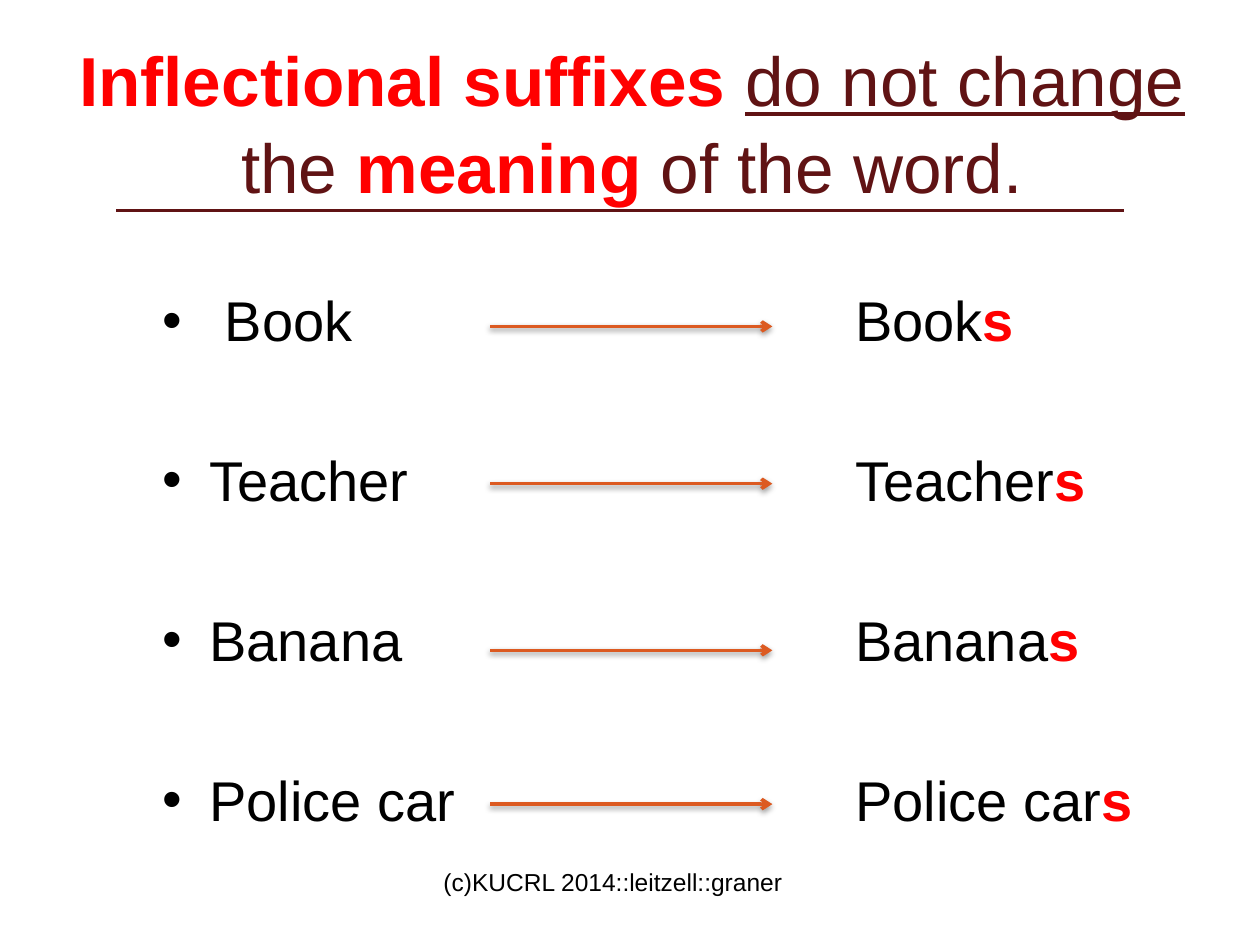
import dataclasses

import lxml.etree
import pptx
import pptx.dml.color
import pptx.enum.shapes
import pptx.enum.text
import pptx.oxml
import pptx.oxml.ns
import pptx.util
from pptx.util import Cm, Pt

Color = pptx.dml.color.RGBColor


@dataclasses.dataclass(frozen=True)
class Theme:
    """Hold the colours, font and type sizes of the slide."""
    font: str = "Arial"
    maroon: Color = Color(0x60, 0x13, 0x14)
    red: Color = Color(0xFF, 0x00, 0x00)
    black: Color = Color(0x00, 0x00, 0x00)
    orange: Color = Color(0xDC, 0x5A, 0x21)
    title_size: float = 39.6
    word_size: float = 32
    footer_size: float = 14


THEME = Theme()
ARROW_SHADOW = (
    '<a:outerShdw %s blurRad="40000" dist="20000" dir="5400000" rotWithShape="0">'
    '<a:srgbClr val="000000"><a:alpha val="38000"/></a:srgbClr></a:outerShdw>'
    % pptx.oxml.ns.nsdecls("a")
)


def set_values(target, values):
    """Set each named attribute of the target."""
    for name, value in values.items():
        setattr(target, name, value)


def add_text_frame(slide, left, top, width, height):
    """Add a wrapping text box and return its text frame."""
    text_box = slide.shapes.add_textbox(Cm(left), Cm(top), Cm(width), Cm(height))
    text_box.text_frame.word_wrap = True
    return text_box.text_frame


def add_run(paragraph, text, size, color, **font_values):
    """Add one formatted run to the paragraph."""
    run = paragraph.add_run()
    run.text = text
    set_values(run.font, {"name": THEME.font, "size": Pt(size), **font_values})
    run.font.color.rgb = color


def add_bullet_and_tab(paragraph, indent, tab):
    """Give the paragraph a hanging bullet and one left tab stop."""
    properties = paragraph._p.get_or_add_pPr()
    properties.set("marL", str(Cm(indent)))
    properties.set("indent", str(-Cm(indent)))
    qualified = pptx.oxml.ns.qn
    lxml.etree.SubElement(properties, qualified("a:buFont"), typeface=THEME.font)
    lxml.etree.SubElement(properties, qualified("a:buChar"), char="•")
    tab_list = lxml.etree.SubElement(properties, qualified("a:tabLst"))
    lxml.etree.SubElement(tab_list, qualified("a:tab"), pos=str(Cm(tab)), algn="l")


def add_line(slide, left, right, y, color, width):
    """Add a horizontal line without a shadow and return it."""
    line = slide.shapes.add_connector(
        pptx.enum.shapes.MSO_CONNECTOR.STRAIGHT, Cm(left), Cm(y), Cm(right), Cm(y))
    line.line.color.rgb = color
    line.line.width = Pt(width)
    lxml.etree.SubElement(line._element.spPr, pptx.oxml.ns.qn("a:effectLst"))
    return line


def add_arrow(slide, y):
    """Add an orange arrow with a soft shadow below it."""
    arrow = add_line(slide, 9.88, 15.57, y, THEME.orange, 2)
    qualified = pptx.oxml.ns.qn
    lxml.etree.SubElement(arrow.line._get_or_add_ln(), qualified("a:tailEnd"), type="arrow")
    effects = arrow._element.spPr.find(qualified("a:effectLst"))
    effects.append(pptx.oxml.parse_xml(ARROW_SHADOW))


def add_title(slide):
    """Add the centred title with its emphasised words."""
    frame = add_text_frame(slide, 0.41, 0.84, 24.66, 3.18)
    frame.vertical_anchor = pptx.enum.text.MSO_ANCHOR.MIDDLE
    paragraph = frame.paragraphs[0]
    set_values(paragraph, {"alignment": pptx.enum.text.PP_ALIGN.CENTER, "line_spacing": 1.05})
    for text, color, font_values in (
        ("Inflectional suffixes ", THEME.red, {"bold": True}),
        ("do not change ", THEME.maroon, {"underline": True}),
        ("the ", THEME.maroon, {}),
        ("meaning ", THEME.red, {"bold": True}),
        ("of the word.", THEME.maroon, {}),
    ):
        add_run(paragraph, text, THEME.title_size, color, **font_values)


def add_word_list(slide, words):
    """Add bulleted words, each with its plural at the tab stop."""
    frame = add_text_frame(slide, 3.02, 5.64, 22.86, 12.57)
    for index, word in enumerate(words):
        paragraph = frame.add_paragraph() if index else frame.paragraphs[0]
        if index:
            paragraph.space_before = Pt(52.9)
        add_bullet_and_tab(paragraph, 0.95, 13.97)
        add_run(paragraph, f"{word}\t{word.strip()}", THEME.word_size, THEME.black)
        add_run(paragraph, "s", THEME.word_size, THEME.red, bold=True)


def add_footer(slide):
    """Add the copyright line."""
    frame = add_text_frame(slide, 8.69, 17.35, 8.05, 1.27)
    add_run(frame.paragraphs[0], "(c)KUCRL 2014::leitzell::graner",
            THEME.footer_size, THEME.black)


def main():
    """Build and save the slide."""
    presentation = pptx.Presentation()
    set_values(presentation, {"slide_width": Cm(25.4), "slide_height": Cm(19.05)})
    slide = presentation.slides.add_slide(presentation.slide_layouts[6])
    add_line(slide, 2.34, 22.66, 4.24, THEME.maroon, 1.5)
    add_title(slide)
    add_footer(slide)
    add_word_list(slide, (" Book", "Teacher", "Banana", "Police car"))
    for y in (6.58, 9.75, 13.11, 16.21):
        add_arrow(slide, y)
    presentation.save("out.pptx")


if __name__ == "__main__":
    main()
